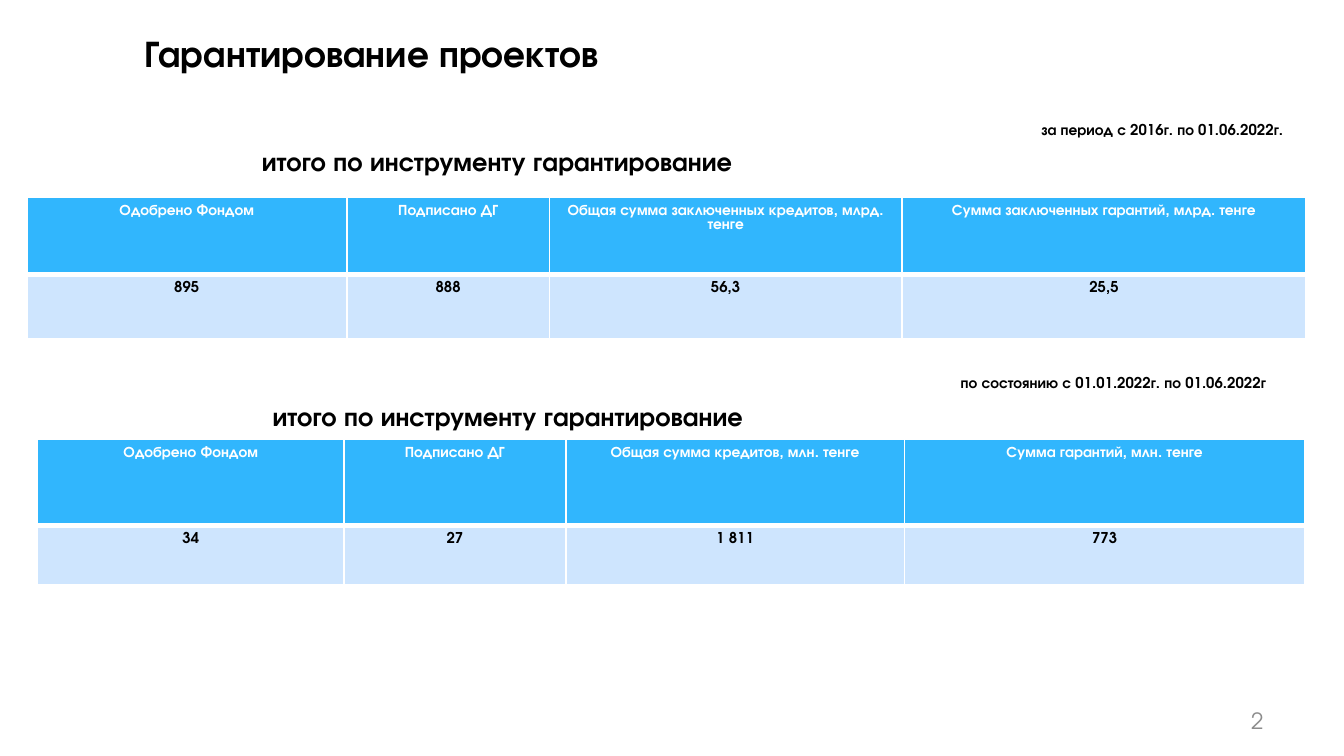
from lxml import etree
from pptx import Presentation
from pptx import util as u
from pptx.dml.color import RGBColor
from pptx.enum import text
from pptx.oxml import ns

FONT = "TeX Gyre Adventor"
WHITE = RGBColor(0xFF, 0xFF, 0xFF)
BLACK = RGBColor(0, 0, 0)
GRAY = RGBColor(0x8C, 0x8C, 0x8C)
BLUE = RGBColor(0x31, 0xB6, 0xFD)
PALE = RGBColor(0xCE, 0xE5, 0xFE)
LEFT, MID, RIGHT = text.PP_ALIGN.LEFT, text.PP_ALIGN.CENTER, text.PP_ALIGN.RIGHT


def write(frame, words, size, color=BLACK, bold=True, align=LEFT):
    line = frame.paragraphs[0]
    line.alignment = align
    run = line.add_run()
    run.text = words
    font = run.font
    font.name, font.size, font.bold = FONT, u.Pt(size), bold
    font.color.rgb = color


def label(slide, box, words, size, anchor=text.MSO_ANCHOR.TOP, **look):
    frame = slide.shapes.add_textbox(*map(u.Inches, box)).text_frame
    frame.word_wrap = True
    frame.vertical_anchor = anchor
    write(frame, words, size, **look)


def edge(cell, base):
    props = cell._tc.get_or_add_tcPr()
    for spot, side in enumerate("LRTB"):
        width = base if side == "B" else 1
        line = etree.Element(ns.qn(f"a:ln{side}"), w=str(u.Pt(width)))
        fill = etree.SubElement(line, ns.qn("a:solidFill"))
        etree.SubElement(fill, ns.qn("a:srgbClr"), val=str(WHITE))
        props.insert(spot, line)


def grid(slide, box, cols, rows, data):
    frame = slide.shapes.add_table(len(rows), len(cols), *map(u.Inches, box))
    table = frame.table
    for col, width in zip(table.columns, cols):
        col.width = u.Inches(width)
    looks = [(BLUE, WHITE, 3), (PALE, BLACK, 1)]
    for r, (line, (fill, ink, base)) in enumerate(zip(data, looks)):
        table.rows[r].height = u.Inches(rows[r])
        for c, words in enumerate(line):
            cell = table.cell(r, c)
            cell.fill.solid()
            cell.fill.fore_color.rgb = fill
            edge(cell, base)
            write(cell.text_frame, words, 8, ink, align=MID)


def report(slide, box, date, span, head, drop, cols, rows, data):
    left, top, width, height = box
    shift, wide = span
    label(slide, (left + shift, top, wide, 0.24), date, 8)
    label(slide, (left + 1.65, top + head, 4.41, 0.34),
          "итого по инструменту гарантирование", 14)
    grid(slide, (left, top + drop, width, height - drop), cols, rows, data)


def title(slide, box):
    label(slide, box, "Гарантирование проектов", 20, text.MSO_ANCHOR.MIDDLE)


def number(slide, box):
    label(slide, box, "2", 12, text.MSO_ANCHOR.MIDDLE,
          color=GRAY, bold=False, align=RIGHT)


def main():
    deck = Presentation()
    deck.slide_width = u.Inches(10)
    deck.slide_height = deck.slide_width * 9 // 16
    slide = deck.slides.add_slide(deck.slide_layouts[6])
    number(slide, (7.17, 5.21, 2.33, 0.3))
    title(slide, (0.98, 0, 4.88, 0.78))
    report(slide, (0.2, 0.85, 9.52, 1.67),
           "за период с 2016г. по 01.06.2022г.", (7.45, 2.36), 0.18, 0.62,
           [2.38, 1.51, 2.62, 3.01], [0.57, 0.48],
           [["Одобрено Фондом", "Подписано ДГ",
             "Общая сумма заключенных кредитов, млрд. тенге",
             "Сумма заключенных гарантий, млрд. тенге"],
            ["895", "888", "56,3", "25,5"]])
    report(slide, (0.28, 2.73, 9.43, 1.62),
           "по состоянию с 01.01.2022г. по 01.06.2022г", (6.77, 2.6), 0.2, 0.54,
           [2.28, 1.65, 2.52, 2.98], [0.64, 0.44],
           [["Одобрено Фондом", "Подписано ДГ",
             "Общая сумма кредитов, млн. тенге", "Сумма гарантий, млн. тенге"],
            ["34", "27", "1 811", "773"]])
    deck.save("out.pptx")


if __name__ == "__main__":
    main()
